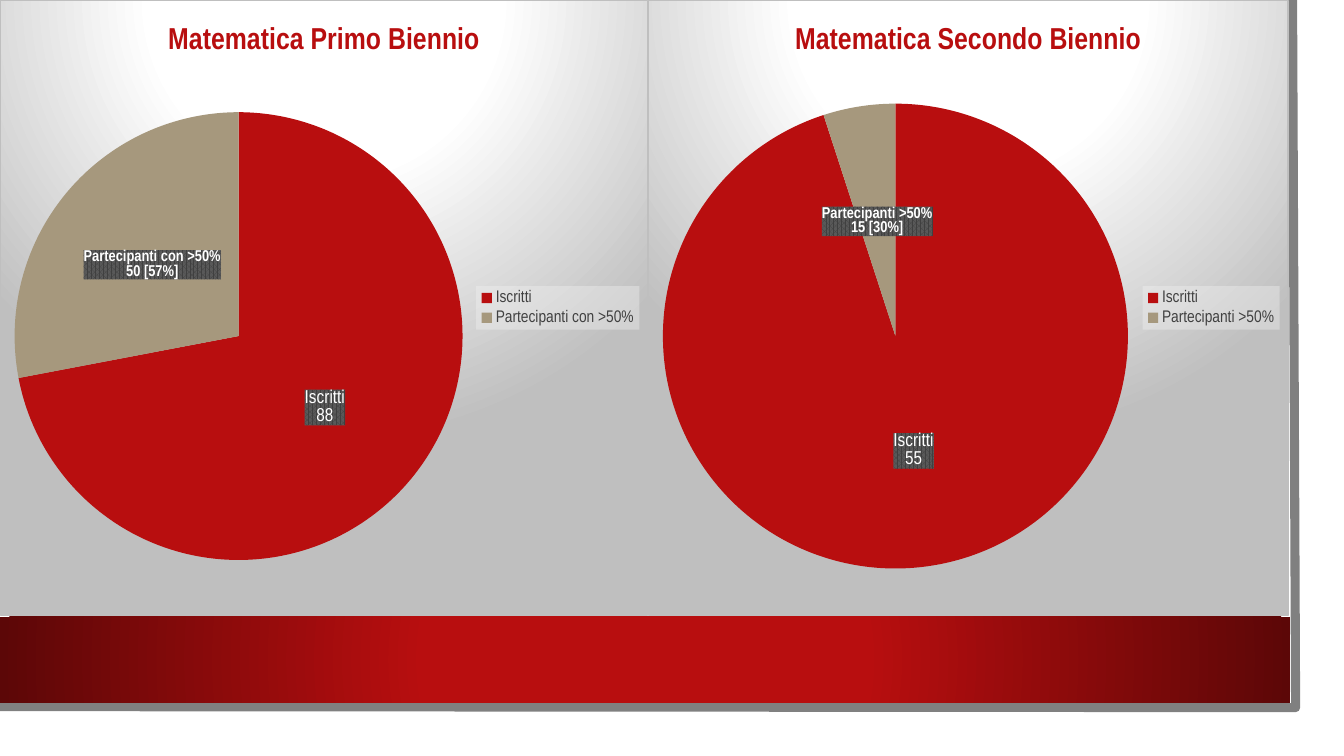
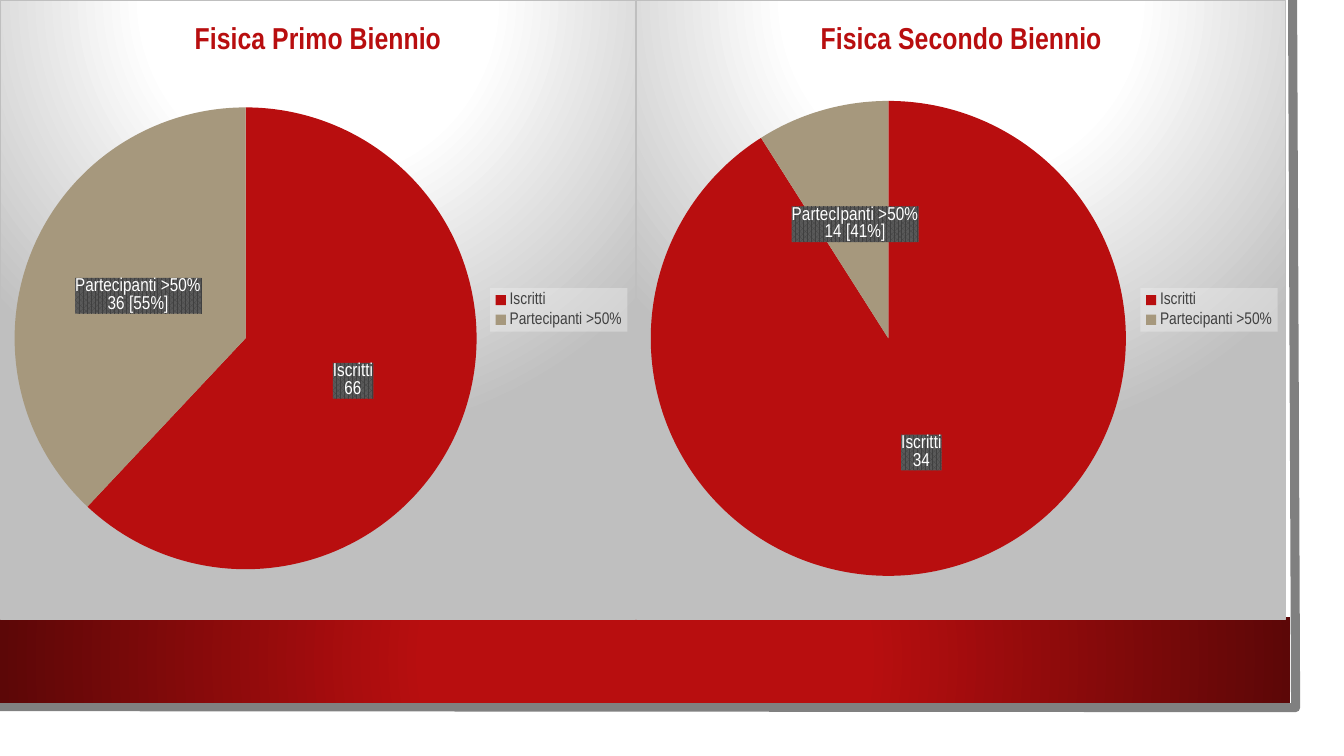
from dataclasses import dataclass

from lxml import etree
from pptx import Presentation
from pptx import util as u
from pptx.chart import data as chart_data
from pptx.dml.color import RGBColor
from pptx.enum import chart as chart_enum, shapes
from pptx.oxml import parse_xml
from pptx.oxml.ns import nsdecls, qn

Inches, Pt = u.Inches, u.Pt


@dataclass(frozen=True)
class Theme:
    font: str = "Arial Narrow"
    red: str = "B80E0F"
    dark_red: str = "5C0707"
    sand: str = "A6987D"
    white: str = "FFFFFF"
    edge: str = "808080"
    panel: str = "BFBFBF"
    ink: str = "404040"
    label_weave: str = "595959"
    legend_fill: str = "F2F2F2"
    title_size: float = 21.6
    label_size: float = 13.3
    small_label_size: float = 11.2
    legend_size: float = 12
    base_size: float = 10


theme = Theme()


def rgb(value):
    return RGBColor.from_string(value)


def radial(stops, left, top, right, bottom):
    """XML of a circular gradient; stops are (percent, colour) pairs."""
    marks = "".join(f'<a:gs pos="{at * 1000}"><a:srgbClr val="{colour}"/></a:gs>'
                    for at, colour in stops)
    return (f'<a:gradFill {nsdecls("a")} rotWithShape="1"><a:gsLst>{marks}</a:gsLst>'
            f'<a:path path="circle"><a:fillToRect l="{left * 1000}" t="{top * 1000}" '
            f'r="{right * 1000}" b="{bottom * 1000}"/></a:path></a:gradFill>')


band_fill = radial([(34, theme.red), (100, theme.dark_red)], 50, 50, 50, 50)
panel_fill = radial([(0, theme.white), (39, theme.white), (100, theme.panel)],
                    50, -80, 50, 180)
panel_style = (f'<c:spPr {nsdecls("c", "a")}>{panel_fill}<a:ln w="9525"><a:solidFill>'
               f'<a:srgbClr val="{theme.panel}"/></a:solidFill></a:ln></c:spPr>')
label_style = (f'<c:spPr {nsdecls("c", "a")}><a:pattFill prst="pct75">'
               f'<a:fgClr><a:srgbClr val="{theme.ink}"/></a:fgClr>'
               f'<a:bgClr><a:srgbClr val="{theme.label_weave}"/></a:bgClr>'
               '</a:pattFill><a:ln><a:noFill/></a:ln></c:spPr>')
legend_style = (f'<c:spPr {nsdecls("c", "a")}><a:solidFill>'
                f'<a:srgbClr val="{theme.legend_fill}"><a:alpha val="39000"/></a:srgbClr>'
                '</a:solidFill><a:ln><a:noFill/></a:ln></c:spPr>')

PIE_LEFT = 0.14
PIE_MIDDLE = 0.546  # share of the panel height

# Panel height, small bold participant labels, then per panel: width, pie diameter,
# title, legend entry, shares, enrolled, participant label
subjects = [
    (6.11, True, [
        (6.43, 4.45, "Matematica Primo Biennio", "Partecipanti con >50%", (72, 28),
         "88", ("Partecipanti con >50%", "50 [57%]")),
        (6.35, 4.62, "Matematica Secondo Biennio", "Partecipanti >50%", (95, 5),
         "55", ("Partecipanti >50%", "15 [30%]")),
    ]),
    (6.15, False, [
        (6.31, 4.59, "Fisica Primo Biennio", "Partecipanti >50%", (62, 38),
         "66", ("Partecipanti >50%", "36 [55%]")),
        (6.45, 4.72, "Fisica Secondo Biennio", "Partecipanti >50%", (91, 9),
         "34", ("PartecIpanti >50%", "14 [41%]")),
    ]),
]

prs = Presentation()
prs.slide_width, prs.slide_height = Inches(13.33), Inches(7.5)

for height, small_bold, panels in subjects:
    slide = prs.slides.add_slide(prs.slide_layouts[6])

    # Sheet, its grey edge and the red band
    sheet = slide.shapes.add_shape(shapes.MSO_SHAPE.RECTANGLE, 0, 0,
                                   Inches(13.1), Inches(7.27))
    sheet.fill.solid()
    sheet.fill.fore_color.rgb = rgb(theme.white)

    outline = slide.shapes.build_freeform(Inches(12.82), 0)
    outline.add_line_segments([(Inches(12.85), Inches(7.02)),
                               (Inches(-0.03), Inches(7.01))], close=False)
    edge = outline.convert_to_shape()
    edge.fill.background()
    edge.line.color.rgb = rgb(theme.edge)
    edge.line.width = Pt(6.5)

    band = slide.shapes.add_shape(shapes.MSO_SHAPE.RECTANGLE, 0, Inches(6.12),
                                  Inches(12.8), Inches(0.85))
    band.element.spPr.find(qn("a:prstGeom")).addnext(parse_xml(band_fill))
    for part in (sheet, edge, band):
        part.shadow.inherit = False
    for part in (sheet, band):
        part.line.fill.background()

    left = 0
    for width, diameter, title, entry, shares, enrolled, participants in panels:
        figures = chart_data.CategoryChartData()
        figures.categories = ["Iscritti", entry]
        figures.add_series("Series 1", shares)
        chart = slide.shapes.add_chart(
            chart_enum.XL_CHART_TYPE.PIE, Inches(left), 0,
            Inches(width), Inches(height), figures).chart
        left += width

        chart.font.name = theme.font
        chart.font.size = Pt(theme.base_size)
        chart.element.find(qn("c:chart")).addnext(parse_xml(panel_style))

        chart.has_title = True
        heading = chart.chart_title.text_frame.paragraphs[0].add_run()
        heading.text = title
        heading.font.name = theme.font
        heading.font.size = Pt(theme.title_size)
        heading.font.bold = True
        heading.font.color.rgb = rgb(theme.red)

        chart.has_legend = True
        legend = chart.legend
        legend.position = chart_enum.XL_LEGEND_POSITION.RIGHT
        legend.include_in_layout = False
        legend.font.name = theme.font
        legend.font.size = Pt(theme.legend_size)
        legend.font.color.rgb = rgb(theme.ink)
        chart.element.xpath(".//c:legend/c:overlay")[0].addnext(parse_xml(legend_style))

        # Pie placed by its diameter
        plot_area = chart.element.xpath(".//c:plotArea")[0]
        for automatic in plot_area.findall(qn("c:layout")):
            plot_area.remove(automatic)
        layout = etree.Element(qn("c:layout"))
        manual = etree.SubElement(layout, qn("c:manualLayout"))
        for tag, value in (("layoutTarget", "inner"), ("xMode", "edge"), ("yMode", "edge"),
                           ("x", PIE_LEFT / width),
                           ("y", PIE_MIDDLE - diameter / height / 2),
                           ("w", diameter / width), ("h", diameter / height)):
            etree.SubElement(manual, qn(f"c:{tag}")).set(
                "val", value if isinstance(value, str) else f"{value:.4f}")
        plot_area.insert(0, layout)

        plot = chart.plots[0]
        plot.vary_by_categories = True
        slices = [
            (theme.red, ("Iscritti", enrolled), False),
            (theme.sand, participants, small_bold),
        ]
        for index, (colour, lines, bold) in enumerate(slices):
            point = plot.series[0].points[index]
            point.format.fill.solid()
            point.format.fill.fore_color.rgb = rgb(colour)
            point.format.line.fill.background()
            label = point.data_label
            frame = label.text_frame
            for number, line in enumerate(lines):
                paragraph = frame.add_paragraph() if number else frame.paragraphs[0]
                run = paragraph.add_run()
                run.text = line
                run.font.name = theme.font
                run.font.size = Pt(theme.small_label_size if bold else theme.label_size)
                run.font.bold = bold
                run.font.color.rgb = rgb(theme.white)
            label.position = chart_enum.XL_LABEL_POSITION.CENTER
        for label_text in chart.element.xpath(".//c:dLbl/c:tx"):
            label_text.addnext(parse_xml(label_style))

prs.save("out.pptx")
